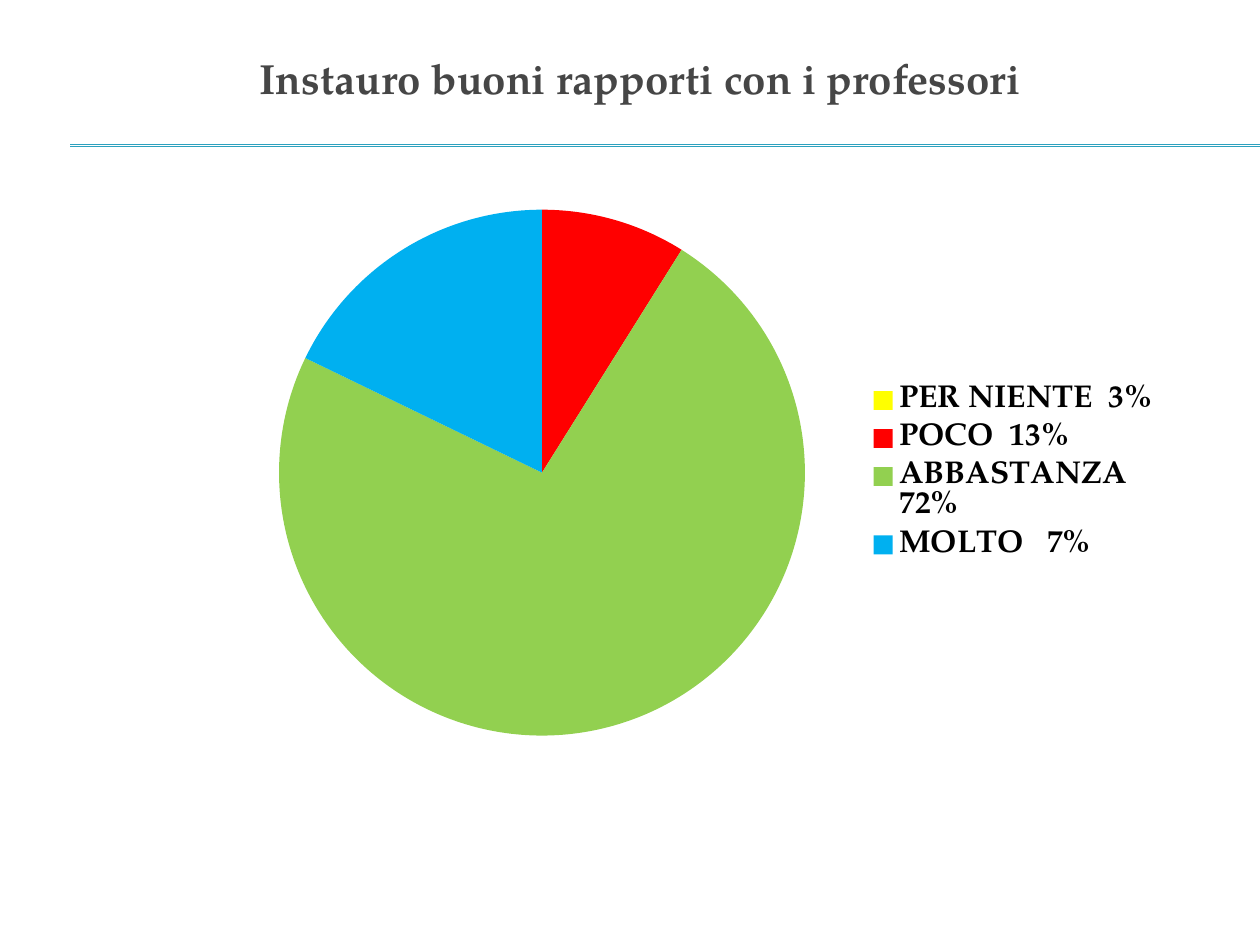
import pptx
import pptx.chart.data
import pptx.dml.color
import pptx.enum.chart
import pptx.enum.shapes
import pptx.enum.text
import pptx.oxml
import pptx.oxml.ns
import pptx.util
from pptx.util import Cm

FONT = "TeX Gyre Pagella"
COLORS = {"title": "464646", "rule": "2DA2BF", "text": "000000"}
ANSWERS = [
    ("PER NIENTE  3%", 0, "FFFF00"),
    ("POCO  13%", 9, "FF0000"),
    ("ABBASTANZA  72%", 74, "92D050"),
    ("MOLTO   7%", 18, "00B0F0"),
]


def write(tf, text, size, color, bold=False, align=pptx.enum.text.PP_ALIGN.CENTER):
    p = tf.paragraphs[0]
    p.alignment = align
    r = p.add_run()
    r.text = text
    r.font.name, r.font.size, r.font.bold = FONT, pptx.util.Pt(size), bold
    r.font.color.rgb = pptx.dml.color.RGBColor.from_string(color)


def place(parent, before, inner, **fractions):
    """Give a chart part a manual layout, as fractions of the chart's size."""
    for old in parent.findall(pptx.oxml.ns.qn("c:layout")):
        parent.remove(old)
    target = '<c:layoutTarget val="inner"/>' if inner else ""
    modes = '<c:xMode val="edge"/><c:yMode val="edge"/>'
    sizes = "".join(f'<c:{k} val="{v}"/>' for k, v in fractions.items())
    layout = pptx.oxml.parse_xml(
        f'<c:layout {pptx.oxml.ns.nsdecls("c")}><c:manualLayout>'
        f"{target}{modes}{sizes}</c:manualLayout></c:layout>")
    parent.find(pptx.oxml.ns.qn(before)).addprevious(layout)


prs = pptx.Presentation()
prs.slide_width, prs.slide_height = Cm(25.4), Cm(19.05)
s = prs.slides.add_slide(prs.slide_layouts[5])

# Double rule under the title
for y in (2.92, 2.95):
    rule = s.shapes.add_connector(
        pptx.enum.shapes.MSO_CONNECTOR.STRAIGHT, Cm(1.42), Cm(y), Cm(25.4), Cm(y))
    rule.line.color.rgb = pptx.dml.color.RGBColor.from_string(COLORS["rule"])
    rule.line.width = pptx.util.Pt(0.75)
    rule.element.spPr.append(
        pptx.oxml.parse_xml(f'<a:effectLst {pptx.oxml.ns.nsdecls("a")}/>'))

title = s.shapes.title
title.left, title.top, title.width, title.height = Cm(0.84), Cm(0.58), Cm(24.13), Cm(1.98)
title.text_frame.vertical_anchor = pptx.enum.text.MSO_ANCHOR.MIDDLE
write(title.text_frame, "Instauro buoni rapporti con i professori",
      size=24, color=COLORS["title"], bold=True)

# Pie of the answers
data = pptx.chart.data.CategoryChartData()
data.categories = [name for name, _, _ in ANSWERS]
data.add_series("Series 1", [value for _, value, _ in ANSWERS])
chart = s.shapes.add_chart(
    pptx.enum.chart.XL_CHART_TYPE.PIE,
    Cm(4.24), Cm(3.89), Cm(19.38), Cm(11.28), data).chart
chart.has_title = False
chart.font.name, chart.font.size = FONT, pptx.util.Pt(18)
chart.font.color.rgb = pptx.dml.color.RGBColor.from_string(COLORS["text"])

plot = chart.plots[0]
plot.vary_by_categories = True
for i, (_, _, color) in enumerate(ANSWERS):
    fill = plot.series[0].points[i].format.fill
    fill.solid()
    fill.fore_color.rgb = pptx.dml.color.RGBColor.from_string(color)

chart.has_legend = True
legend = chart.legend
legend.position = pptx.enum.chart.XL_LEGEND_POSITION.RIGHT
legend.include_in_layout = True
legend.font.bold = True
legend.font.name, legend.font.size = FONT, pptx.util.Pt(18)
legend.font.color.rgb = pptx.dml.color.RGBColor.from_string(COLORS["text"])

place(chart.element.xpath(".//c:plotArea")[0], "c:pieChart", True,
      x=0.07, y=0.03, w=0.55, h=0.94)
place(chart.element.xpath(".//c:legend")[0], "c:overlay", False,
      x=0.68, y=0.33, w=0.31, h=0.34)

prs.save("out.pptx")
